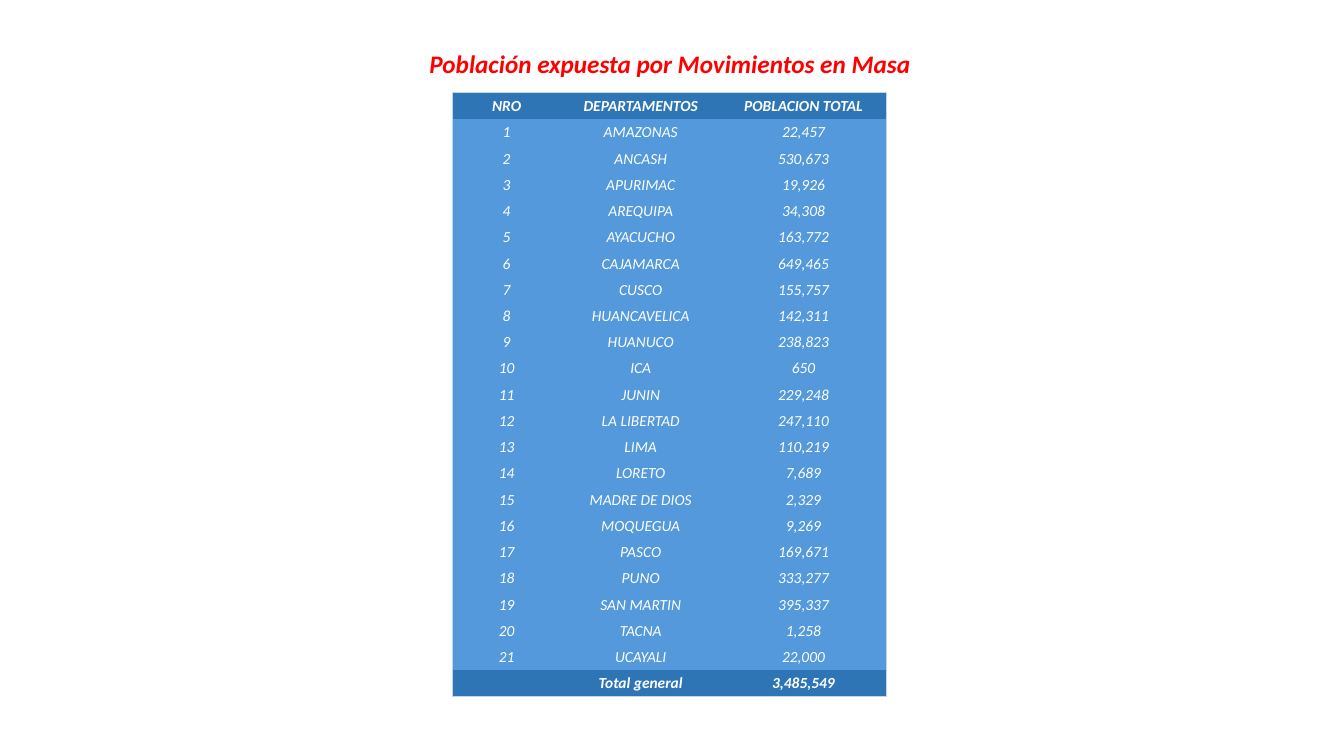
from lxml.etree import SubElement
from pptx import Presentation
from pptx.dml.color import RGBColor
from pptx.enum.text import MSO_ANCHOR as Anchor, MSO_AUTO_SIZE as AutoSize, PP_ALIGN as Align
from pptx.oxml.ns import qn
from pptx.util import Inches, Pt

RED = RGBColor(0xFF, 0x00, 0x00)
WHITE = RGBColor(0xFF, 0xFF, 0xFF)
DARK_BLUE = RGBColor(0x2E, 0x75, 0xB6)
LIGHT_BLUE = RGBColor(0x53, 0x99, 0xDB)
PALE_BLUE = RGBColor(0xC4, 0xD5, 0xEB)

FONT = "Calibri"
NO_GRID_STYLE = "{2D5ABB26-0587-4C30-8999-92F81FD0307C}"
COLUMN_WIDTHS = (1.07, 1.59, 1.64)
TABLE_HEIGHT = 5.99

HEADER = ("NRO", "DEPARTAMENTOS", "POBLACION TOTAL")
TOTAL = ("", "Total general", "3,485,549")
POPULATION = (
    ("AMAZONAS", 22457), ("ANCASH", 530673), ("APURIMAC", 19926),
    ("AREQUIPA", 34308), ("AYACUCHO", 163772), ("CAJAMARCA", 649465),
    ("CUSCO", 155757), ("HUANCAVELICA", 142311), ("HUANUCO", 238823),
    ("ICA", 650), ("JUNIN", 229248), ("LA LIBERTAD", 247110),
    ("LIMA", 110219), ("LORETO", 7689), ("MADRE DE DIOS", 2329),
    ("MOQUEGUA", 9269), ("PASCO", 169671), ("PUNO", 333277),
    ("SAN MARTIN", 395337), ("TACNA", 1258), ("UCAYALI", 22000),
)


def format_para(para, size, color, bold):
    para.alignment = Align.CENTER
    for span in para.runs:
        font = span.font
        font.name, font.size = FONT, Pt(size)
        font.bold, font.italic = bold, True
        font.color.rgb = color
    if not para.runs:
        # An empty cell needs a small end mark to keep its row low
        SubElement(para._p, qn("a:endParaRPr"), sz=str(size * 100))


def add_title(page, text):
    title = page.shapes.title
    title.left, title.top = Inches(4.13), Inches(0.43)
    title.width, title.height = Inches(5.03), Inches(0.4)
    frame = title.text_frame
    frame.text = text
    frame.word_wrap = False
    frame.auto_size = AutoSize.SHAPE_TO_FIT_TEXT
    frame.vertical_anchor = Anchor.TOP
    format_para(frame.paragraphs[0], 18, RED, True)


def add_border(cell, side):
    line = SubElement(cell._tc.get_or_add_tcPr(), qn(f"a:ln{side}"), w=str(Pt(0.5)))
    fill = SubElement(line, qn("a:solidFill"))
    SubElement(fill, qn("a:srgbClr"), val=str(PALE_BLUE))


def fill_cell(cell, text, strong):
    cell.text = text
    cell.vertical_anchor = Anchor.MIDDLE
    cell.margin_left = cell.margin_right = cell.margin_top = Inches(0.01)
    cell.margin_bottom = 0
    cell.fill.solid()
    cell.fill.fore_color.rgb = DARK_BLUE if strong else LIGHT_BLUE
    format_para(cell.text_frame.paragraphs[0], 11, WHITE, strong)


def add_population_table(page, rows):
    last_row, last_column = len(rows) - 1, len(COLUMN_WIDTHS) - 1
    frame = page.shapes.add_table(
        len(rows), len(COLUMN_WIDTHS), Inches(4.49), Inches(0.92),
        Inches(sum(COLUMN_WIDTHS)), Inches(TABLE_HEIGHT))
    table = frame.table
    table.horz_banding = False
    table._tbl.tblPr.find(qn("a:tableStyleId")).text = NO_GRID_STYLE
    for column, width in zip(table.columns, COLUMN_WIDTHS):
        column.width = Inches(width)
    for r, values in enumerate(rows):
        table.rows[r].height = Inches(TABLE_HEIGHT / len(rows))
        for c, text in enumerate(values):
            cell = table.cell(r, c)
            # Only the outer edge of the table is ruled
            edges = {"L": c == 0, "R": c == last_column,
                     "T": r == 0, "B": r == last_row}
            for side, is_outer in edges.items():
                if is_outer:
                    add_border(cell, side)
            fill_cell(cell, text, r in (0, last_row))


def main():
    deck = Presentation()
    deck.slide_width, deck.slide_height = Inches(13.33), Inches(7.5)
    page = deck.slides.add_slide(deck.slide_layouts[5])

    # Heading
    add_title(page, "Población expuesta por Movimientos en Masa")

    # Numbered departments between the header and the total
    departments = [(str(number), name, f"{people:,}")
                   for number, (name, people) in enumerate(POPULATION, 1)]
    add_population_table(page, [HEADER, *departments, TOTAL])

    deck.save("out.pptx")


if __name__ == "__main__":
    main()
